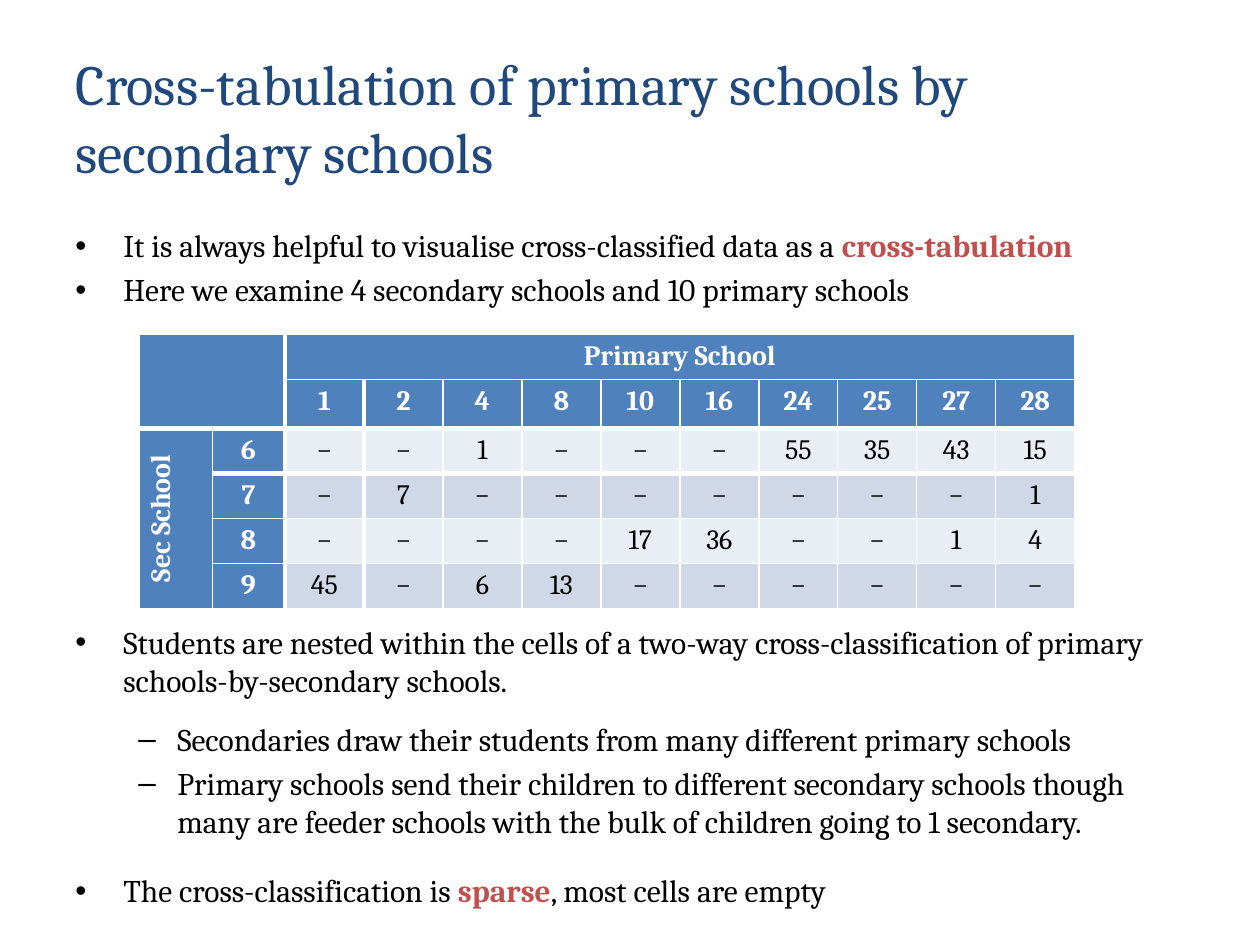
from dataclasses import dataclass

from lxml import etree
from pptx import Presentation
from pptx.dml.color import RGBColor
from pptx.enum.text import MSO_ANCHOR, MSO_AUTO_SIZE, PP_ALIGN
from pptx.oxml.ns import qn
from pptx.util import Pt

PX = 914400 / 126
TITLE_ONLY = 5
LEFT, CENTER = PP_ALIGN.LEFT, PP_ALIGN.CENTER
TOP, MIDDLE = MSO_ANCHOR.TOP, MSO_ANCHOR.MIDDLE
NO_AUTOFIT = MSO_AUTO_SIZE.NONE


@dataclass(frozen=True)
class Theme:
    font: str = "Cambria"
    title: str = "1F497D"
    text: str = "000000"
    accent: str = "C0504D"
    header: str = "4F81BD"
    light: str = "FFFFFF"
    bands: tuple = ("E9EDF4", "D0D8E8")
    title_size: float = 32.4
    body_size: float = 18
    table_size: float = 16


THEME = Theme()


def px(length):
    return round(length * PX)


def write(paragraph, text, size=THEME.body_size, color=THEME.text, bold=False, align=LEFT):
    paragraph.alignment = align
    run = paragraph.add_run()
    run.text = text
    run.font.name = THEME.font
    run.font.size = Pt(size)
    run.font.bold = bold
    run.font.color.rgb = RGBColor.from_string(color)


deck = Presentation()
deck.slide_width, deck.slide_height = px(1260), px(945)
slide = deck.slides.add_slide(deck.slide_layouts[TITLE_ONLY])

# Title
title = slide.shapes.title
title.left, title.top, title.width, title.height = px(63), px(38), px(1134), px(157)
title.text_frame.word_wrap = True
title.text_frame.auto_size = NO_AUTOFIT
title.text_frame.vertical_anchor = MIDDLE
write(title.text_frame.paragraphs[0],
      "Cross-tabulation of primary schools by secondary schools",
      size=THEME.title_size, color=THEME.title)

# Bullets: level, space before in points, then (text, emphasised) pieces
BULLETS = [
    (0, 3.6, [("It is always helpful to visualise cross-classified data as a ", False),
              ("cross-tabulation", True)]),
    (0, 3.6, [("Here we examine 4 secondary schools and 10 primary schools", False)]),
    (0, 180, [("Students are nested within the cells of a two-way cross-classification "
               "of primary schools-by-secondary schools.", False)]),
    (1, 12, [("Secondaries draw their students from many different primary schools", False)]),
    (1, 3.6, [("Primary schools send their children to different secondary schools though "
               "many are feeder schools with the bulk of children going to 1 secondary.", False)]),
    (0, 18.3, [("The cross-classification is ", False), ("sparse", True),
               (", most cells are empty", False)]),
]
LEVELS = [("•", 48, -48), ("–", 102, -39)]  # mark, left margin, first-line indent

body = slide.shapes.add_textbox(px(63), px(220), px(1134), px(725)).text_frame
body.word_wrap = True
body.auto_size = NO_AUTOFIT
for index, (level, gap, pieces) in enumerate(BULLETS):
    bullet = body.add_paragraph() if index else body.paragraphs[0]
    bullet.level = level
    bullet.space_before = Pt(gap)
    for text, emphasised in pieces:
        write(bullet, text, bold=emphasised,
              color=THEME.accent if emphasised else THEME.text)
    mark, margin, indent = LEVELS[level]
    properties = bullet._p.get_or_add_pPr()
    properties.set("marL", str(px(margin)))
    properties.set("indent", str(px(indent)))
    etree.SubElement(properties, qn("a:buFont")).set("typeface", "Arial")
    etree.SubElement(properties, qn("a:buChar")).set("char", mark)

# Cross-tabulation
HEADER_ROWS = HEADER_COLS = 2
GRID = [
    ["", "", "Primary School"] + [""] * 9,
    ["", "", "1", "2", "4", "8", "10", "16", "24", "25", "27", "28"],
    ["Sec School", "6", "−", "−", "1", "−", "−", "−", "55", "35", "43", "15"],
    ["", "7", "−", "7", "−", "−", "−", "−", "−", "−", "−", "1"],
    ["", "8", "−", "−", "−", "−", "17", "36", "−", "−", "1", "4"],
    ["", "9", "45", "−", "6", "13", "−", "−", "−", "−", "−", "−"],
]
EDGE_POINTS = {1: 0.5, 2: 3, 3: 3}  # grid line number to width; other lines are 1 pt
ROW_HEIGHT, HEADER_WIDTH, SCHOOL_WIDTH = 45, 73, 79

rows, cols = len(GRID), len(GRID[0])
table_width = HEADER_COLS * HEADER_WIDTH + (cols - HEADER_COLS) * SCHOOL_WIDTH
table = slide.shapes.add_table(rows, cols, px(139), px(334),
                               px(table_width), px(rows * ROW_HEIGHT)).table
for c, column in enumerate(table.columns):
    column.width = px(HEADER_WIDTH if c < HEADER_COLS else SCHOOL_WIDTH)
for row in table.rows:
    row.height = px(ROW_HEIGHT)

table.cell(0, 0).merge(table.cell(1, 1))
table.cell(0, 2).merge(table.cell(0, cols - 1))
table.cell(2, 0).merge(table.cell(rows - 1, 0))

for r, values in enumerate(GRID):
    for c, value in enumerate(values):
        cell = table.cell(r, c)
        is_header = r < HEADER_ROWS or c < HEADER_COLS
        cell.margin_top, cell.margin_bottom = px(6), px(5)
        cell.vertical_anchor = TOP
        properties = cell._tc.get_or_add_tcPr()
        edges = {"a:lnL": c, "a:lnR": c + cell.span_width,
                 "a:lnT": r, "a:lnB": r + cell.span_height}
        for tag, edge in edges.items():
            border = etree.SubElement(properties, qn(tag))
            border.set("w", str(Pt(EDGE_POINTS.get(edge, 1))))
            border_fill = etree.SubElement(border, qn("a:solidFill"))
            etree.SubElement(border_fill, qn("a:srgbClr")).set("val", THEME.light)
        cell.fill.solid()
        cell.fill.fore_color.rgb = RGBColor.from_string(
            THEME.header if is_header else THEME.bands[r % 2])
        if value:
            write(cell.text_frame.paragraphs[0], value, size=THEME.table_size,
                  color=THEME.light if is_header else THEME.text,
                  bold=is_header, align=CENTER)

table.cell(2, 0)._tc.get_or_add_tcPr().set("vert", "vert270")

deck.save("out.pptx")
